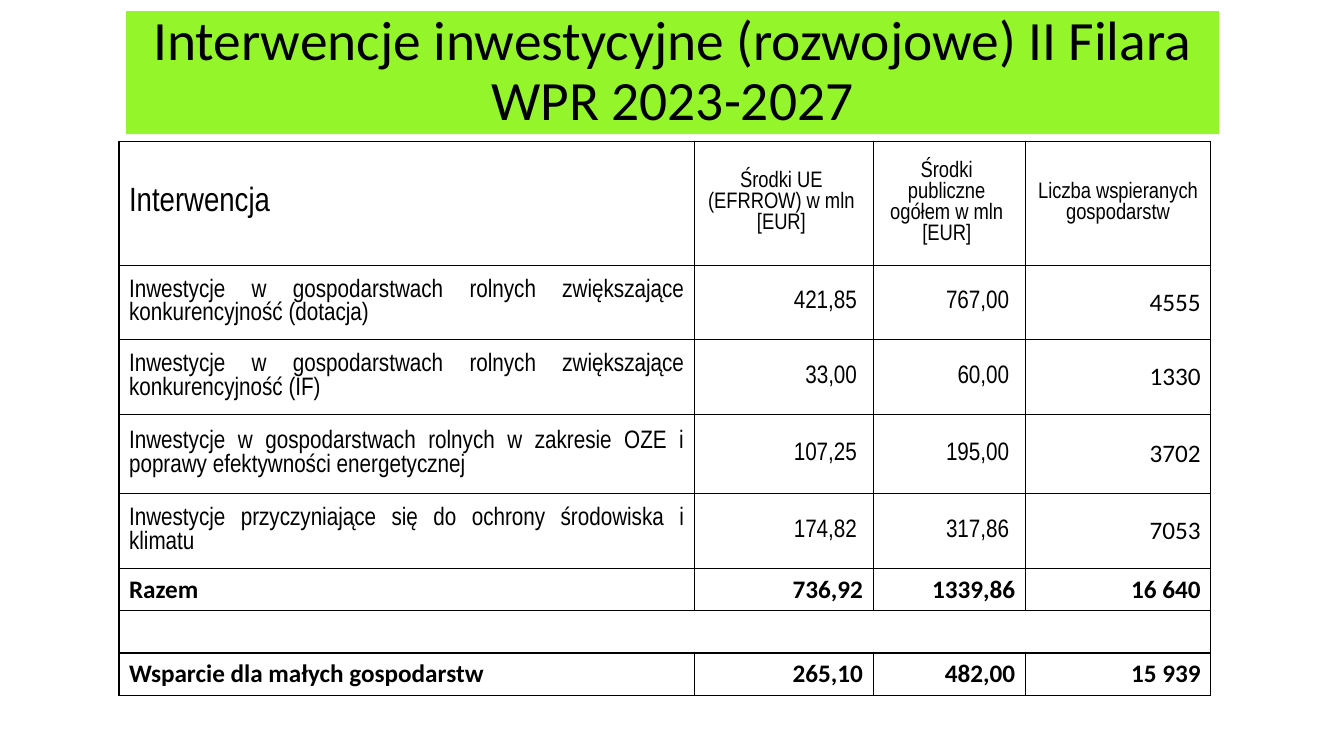
from lxml.etree import SubElement
from pptx import Presentation
from pptx.dml.color import RGBColor
from pptx.enum.text import MSO_ANCHOR, MSO_AUTO_SIZE, PP_ALIGN
from pptx.oxml.ns import qn
from pptx.util import Inches, Pt

TITLE = "Interwencje inwestycyjne (rozwojowe) II Filara WPR 2023-2027"
ROWS = [
    ("head", 1.23, ("Interwencja", "Środki UE (EFRROW) w mln [EUR]",
                    "Środki publiczne ogółem w mln [EUR]",
                    "Liczba wspieranych gospodarstw")),
    ("item", 0.74, ("Inwestycje w gospodarstwach rolnych zwiększające konkurencyjność (dotacja)",
                    "421,85", "767,00", "4555")),
    ("item", 0.74, ("Inwestycje w gospodarstwach rolnych zwiększające konkurencyjność (IF)",
                    "33,00", "60,00", "1330")),
    ("item", 0.79, ("Inwestycje w gospodarstwach rolnych w zakresie OZE i poprawy efektywności energetycznej",
                    "107,25", "195,00", "3702")),
    ("item", 0.74, ("Inwestycje przyczyniające się do ochrony środowiska i klimatu",
                    "174,82", "317,86", "7053")),
    ("total", 0.42, ("Razem", "736,92", "1339,86", "16 640")),
    ("gap", 0.42, ("", "", "", "")),
    ("total", 0.42, ("Wsparcie dla małych gospodarstw", "265,10", "482,00", "15 939")),
]
COLS = (5.71, 1.77, 1.51, 1.84)
COLORS = {"lime": "95F52B", "ink": "000000"}
NARROW, PLAIN = "Arial Narrow", "Calibri"
HEAD = {"name": NARROW, "size": Pt(16)}
ITEM = {"name": NARROW, "size": Pt(18)}
COUNT = {"name": PLAIN, "size": Pt(18)}
TOTAL = {"name": PLAIN, "size": Pt(18), "bold": True}
FONTS = {
    "head": ({"name": NARROW, "size": Pt(24)}, HEAD, HEAD, HEAD),
    "item": (ITEM, ITEM, ITEM, COUNT),
    "total": (TOTAL,) * 4,
    "gap": (COUNT,) * 4,
}
INSET = {"head": 0.15, "item": 0.16}


def format(obj, values):
    for key, value in values.items():
        setattr(obj, key, value)


def write(para, text, font, align):
    para.alignment = align
    if text:
        run = para.add_run()
        run.text = text
        format(run.font, font)
        run.font.color.rgb = RGBColor.from_string(COLORS["ink"])


def border(cell):
    props = cell._tc.get_or_add_tcPr()
    for side in ("lnL", "lnR", "lnT", "lnB"):
        line = SubElement(props, qn(f"a:{side}"), w=str(Pt(1)))
        fill = SubElement(line, qn("a:solidFill"))
        SubElement(fill, qn("a:srgbClr"), val=COLORS["ink"])


def add_title(slide):
    title = slide.shapes.title
    format(title, {"left": Inches(1.25), "top": Inches(0.11),
                   "width": Inches(10.84), "height": Inches(1.22)})
    title.fill.solid()
    title.fill.fore_color.rgb = RGBColor.from_string(COLORS["lime"])
    frame = title.text_frame
    format(frame, {"auto_size": MSO_AUTO_SIZE.NONE, "word_wrap": True,
                   "vertical_anchor": MSO_ANCHOR.MIDDLE})
    para = frame.paragraphs[0]
    para.line_spacing = 0.9
    write(para, TITLE, {"name": PLAIN, "size": Pt(39.6)}, PP_ALIGN.CENTER)


def add_grid(slide):
    grid = slide.shapes.add_table(
        len(ROWS), len(COLS), Inches(1.18), Inches(1.4),
        Inches(sum(COLS)), Inches(sum(row[1] for row in ROWS))).table
    format(grid, {"first_row": False, "horz_banding": False})
    for col, width in zip(grid.columns, COLS):
        col.width = Inches(width)
    for r, (kind, height, texts) in enumerate(ROWS):
        grid.rows[r].height = Inches(height)
        for c, text in enumerate(texts):
            cell = grid.cell(r, c)
            border(cell)
            cell.fill.background()
            inset = INSET.get(kind, 0.1) if c in (1, 2) else 0.1
            format(cell, {"vertical_anchor": MSO_ANCHOR.MIDDLE,
                          "margin_right": Inches(inset)})
            align = (PP_ALIGN.JUSTIFY if c == 0 else
                     PP_ALIGN.CENTER if kind == "head" else PP_ALIGN.RIGHT)
            write(cell.text_frame.paragraphs[0], text, FONTS[kind][c], align)
        if kind == "gap":
            grid.cell(r, 0).merge(grid.cell(r, len(COLS) - 1))


def main():
    deck = Presentation()
    format(deck, {"slide_width": Inches(13.33), "slide_height": Inches(7.5)})
    slide = deck.slides.add_slide(deck.slide_layouts[5])
    add_title(slide)
    add_grid(slide)
    deck.save("out.pptx")


if __name__ == "__main__":
    main()
